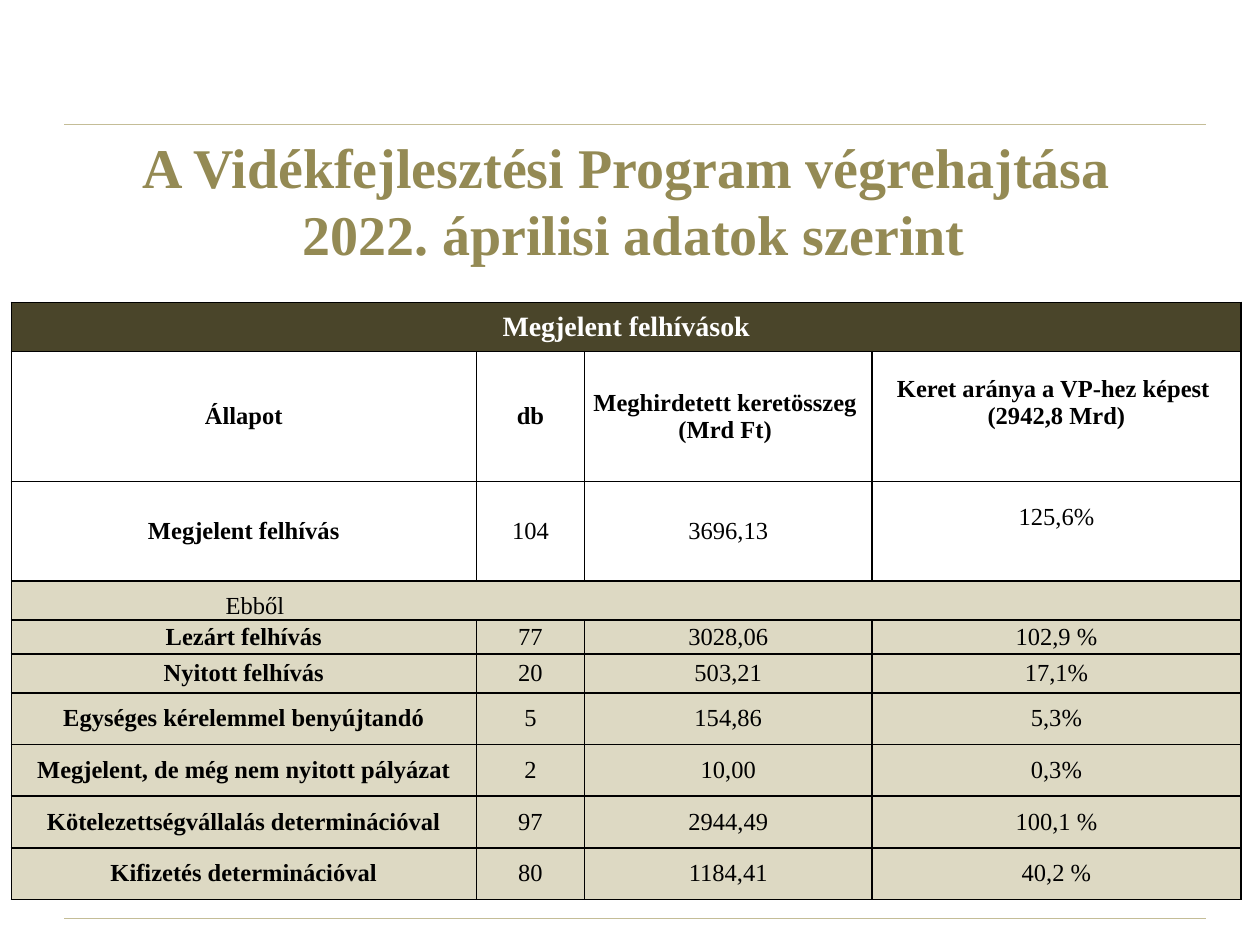
from lxml import etree
from pptx import Presentation
from pptx.dml.color import RGBColor
from pptx.enum.shapes import MSO_CONNECTOR
from pptx.enum.text import MSO_ANCHOR, MSO_AUTO_SIZE, PP_ALIGN
from pptx.oxml import parse_xml
from pptx.oxml.ns import nsdecls, qn
from pptx.util import Inches, Pt

FONT = "Times New Roman"
BLACK = RGBColor(0x00, 0x00, 0x00)
WHITE = RGBColor(0xFF, 0xFF, 0xFF)
OLIVE = RGBColor(0x94, 0x8A, 0x54)
DARK_OLIVE = RGBColor(0x4A, 0x45, 0x2A)
SAND = RGBColor(0xDD, 0xD9, 0xC3)
RULE = RGBColor(0xC4, 0xBD, 0x97)

STRAIGHT = MSO_CONNECTOR.STRAIGHT
LEFT, CENTER = PP_ALIGN.LEFT, PP_ALIGN.CENTER
MIDDLE, BOTTOM = MSO_ANCHOR.MIDDLE, MSO_ANCHOR.BOTTOM
NO_AUTOFIT = MSO_AUTO_SIZE.NONE
TITLE_ONLY = 5

COLUMN_WIDTHS = [3.69, 0.86, 2.28, 2.93]
ROW_HEIGHTS = [0.39, 1.03, 0.79, 0.31, 0.27, 0.31] + [0.41] * 4
HEADERS = ["Állapot", "db", "Meghirdetett keretösszeg \n(Mrd Ft) ",
           "Keret aránya a VP-hez képest \n(2942,8 Mrd)"]
TOTALS = ["Megjelent felhívás", "104", "3696,13", "125,6%"]
DETAILS = [
    ["Lezárt felhívás", "77", "3028,06", "102,9 %"],
    ["Nyitott felhívás", "20", "503,21", "17,1%"],
    ["Egységes kérelemmel benyújtandó", "5", "154,86", "5,3%"],
    ["Megjelent, de még nem nyitott pályázat", "2", "10,00", "0,3%"],
    ["Kötelezettségvállalás determinációval", "97", "2944,49", "100,1 %"],
    ["Kifizetés determinációval", "80", "1184,41", "40,2 %"],
]


class SlideBuilder:
    def __init__(self, slide):
        self.slide = slide

    def fill_text(self, frame, text, size, color, bold, align=CENTER):
        frame.text = text
        for paragraph in frame.paragraphs:
            paragraph.alignment = align
            paragraph.space_before = Pt(0)
            font = paragraph.font
            font.name, font.size, font.bold = FONT, Pt(size), bold
            font.color.rgb = color

    def rule(self, y):
        line = self.slide.shapes.add_connector(
            STRAIGHT, Inches(0.51), Inches(y), Inches(9.57), Inches(y))
        line.line.color.rgb = RULE
        line.line.width = Pt(0.75)
        etree.SubElement(line.element.spPr, qn("a:effectLst"))

    def title(self, text):
        title = self.slide.shapes.title
        title.left, title.top = Inches(0.09), Inches(1.23)
        title.width, title.height = Inches(9.88), Inches(0.71)
        frame = title.text_frame
        frame.auto_size = NO_AUTOFIT
        frame.vertical_anchor = MIDDLE
        self.fill_text(frame, text, 32, OLIVE, True)

    def table(self):
        shape = self.slide.shapes.add_table(
            len(ROW_HEIGHTS), len(COLUMN_WIDTHS), Inches(0.09), Inches(2.4),
            Inches(sum(COLUMN_WIDTHS)), Inches(sum(ROW_HEIGHTS)))
        table = shape.table
        table.first_row = table.horz_banding = False
        for column, width in zip(table.columns, COLUMN_WIDTHS):
            column.width = Inches(width)
        for row, height in zip(table.rows, ROW_HEIGHTS):
            row.height = Inches(height)
        return table

    def cell(self, cell, text, fill=None, size=14, color=BLACK, bold=False,
             align=CENTER, anchor=MIDDLE, left=0, bottom=0):
        cell.margin_left, cell.margin_bottom = Inches(left), Inches(bottom)
        cell.margin_top = cell.margin_right = 0
        cell.vertical_anchor = anchor
        self.fill_text(cell.text_frame, text, size, color, bold, align)
        if fill is None:
            cell.fill.background()
        else:
            cell.fill.solid()
            cell.fill.fore_color.rgb = fill

    def borders(self, table):
        for cell in table.iter_cells():
            properties = cell._tc.get_or_add_tcPr()
            for index, side in enumerate(("lnL", "lnR", "lnT", "lnB")):
                properties.insert(index, parse_xml(
                    f'<a:{side} {nsdecls("a")} w="{Pt(1)}"><a:solidFill>'
                    f'<a:srgbClr val="{BLACK}"/></a:solidFill></a:{side}>'))


def main():
    deck = Presentation()
    deck.slide_width, deck.slide_height = Inches(10), Inches(7.5)
    page = SlideBuilder(deck.slides.add_slide(deck.slide_layouts[TITLE_ONLY]))

    # Rules and title
    for y in (7.29, 0.99):
        page.rule(y)
    page.title("A Vidékfejlesztési Program végrehajtása \n"
               "2022. áprilisi adatok szerint")

    # Full-width band rows
    table = page.table()
    for row in (0, 3):
        table.cell(row, 0).merge(table.cell(row, len(COLUMN_WIDTHS) - 1))
    page.cell(table.cell(0, 0), "Megjelent felhívások", DARK_OLIVE, 16,
              WHITE, True)
    page.cell(table.cell(3, 0), "Ebből", SAND, align=LEFT, anchor=BOTTOM,
              left=1.7)

    # Headers and totals, with the last column set a little higher
    for column, (header, total) in enumerate(zip(HEADERS, TOTALS)):
        raised = 0.22 if column == 3 else 0
        page.cell(table.cell(1, column), header, bold=True, bottom=raised)
        page.cell(table.cell(2, column), total, bold=column == 0,
                  bottom=raised)

    # Breakdown
    for row, values in enumerate(DETAILS, start=4):
        for column, value in enumerate(values):
            page.cell(table.cell(row, column), value, SAND, bold=column == 0)
    page.borders(table)

    deck.save("out.pptx")


if __name__ == "__main__":
    main()
